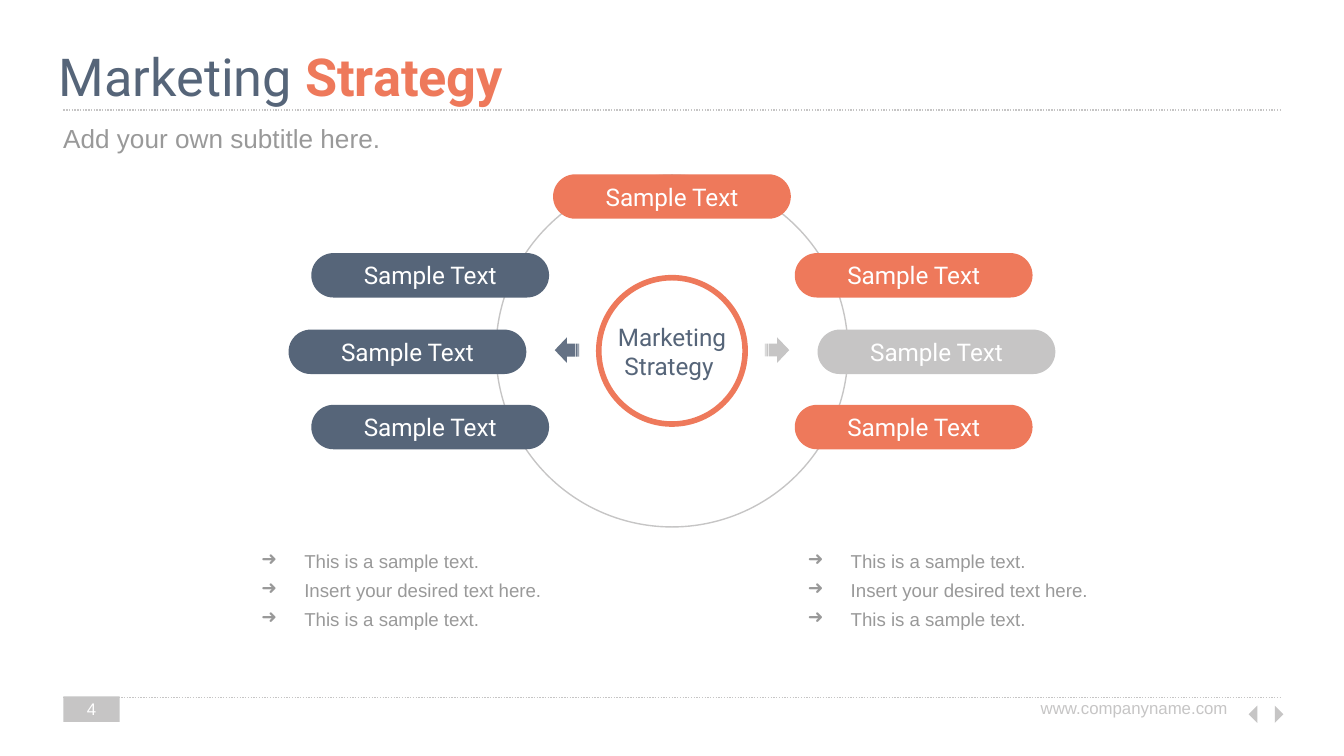
from pptx import Presentation
from pptx.dml.color import RGBColor
from pptx.enum.dml import MSO_LINE
from pptx.enum.shapes import MSO_CONNECTOR, MSO_SHAPE
from pptx.enum.text import MSO_ANCHOR, PP_ALIGN
from pptx.oxml.ns import qn
from pptx.util import Pt
from lxml.etree import SubElement

NAVY, CORAL, SILVER, GREY, WHITE = "566579", "EE795B", "C6C5C5", "999999", "FFFFFF"
SLIDE_W, SLIDE_H = 720, 405
CENTER_X, CENTER_Y = SLIDE_W / 2, 188
MARGIN = 34
PILL_W, PILL_H = 127.4, 23.8
ARROW_W, ARROW_H = 13, 13.7
POINTS = ["This is a sample text.", "Insert your desired text here.", "This is a sample text."]


def color(hex_code):
    return RGBColor.from_string(hex_code)


def mirrored(left, width):
    return SLIDE_W - left - width


def write(holder, paragraphs, size=13, font="Roboto", align=PP_ALIGN.LEFT,
          anchor=MSO_ANCHOR.TOP, bullet=None, spacing=None):
    """Each paragraph is a list of (text, colour, bold) runs."""
    frame = holder.text_frame
    frame.word_wrap = True
    frame.vertical_anchor = anchor
    frame.margin_left = frame.margin_right = Pt(7.2)
    frame.margin_top = frame.margin_bottom = Pt(7.2)
    for index, runs in enumerate(paragraphs):
        paragraph = frame.paragraphs[0] if index == 0 else frame.add_paragraph()
        paragraph.alignment = align
        if spacing:
            paragraph.line_spacing = spacing
        if bullet:
            add_bullet(paragraph, bullet, runs[0][1])
        for text, hex_code, bold in runs:
            run = paragraph.add_run()
            run.text = text
            run.font.name = font
            run.font.size = Pt(size)
            run.font.bold = bold
            run.font.color.rgb = color(hex_code)


def add_bullet(paragraph, symbol, hex_code):
    properties = paragraph._p.get_or_add_pPr()
    properties.set("marL", str(Pt(36)))
    properties.set("indent", str(Pt(-23)))
    bullet_color = SubElement(properties, qn("a:buClr"))
    SubElement(bullet_color, qn("a:srgbClr"), val=hex_code)
    SubElement(properties, qn("a:buChar"), char=symbol)


def add_text(slide, left, top, width, height, paragraphs, **text_format):
    box = slide.shapes.add_textbox(Pt(left), Pt(top), Pt(width), Pt(height))
    write(box, paragraphs, **text_format)


def add_figure(slide, preset, left, top, width, height, fill=None, outline=None,
               weight=0.75, rotation=0):
    figure = slide.shapes.add_shape(preset, Pt(left), Pt(top), Pt(width), Pt(height))
    figure.shadow.inherit = False
    figure.rotation = rotation
    if fill:
        figure.fill.solid()
        figure.fill.fore_color.rgb = color(fill)
    else:
        figure.fill.background()
    if outline:
        figure.line.color.rgb = color(outline)
        figure.line.width = Pt(weight)
    else:
        figure.line.fill.background()
    return figure


def add_rule(slide, y):
    rule = slide.shapes.add_connector(
        MSO_CONNECTOR.STRAIGHT, Pt(MARGIN), Pt(y), Pt(SLIDE_W - MARGIN), Pt(y))
    rule.line.color.rgb = color(SILVER)
    rule.line.width = Pt(0.75)
    rule.line.dash_style = MSO_LINE.ROUND_DOT
    SubElement(rule._element.spPr, qn("a:effectLst"))


def add_ring(slide, radius, outline, weight):
    add_figure(slide, MSO_SHAPE.OVAL, CENTER_X - radius, CENTER_Y - radius,
               2 * radius, 2 * radius, outline=outline, weight=weight)


def add_pill(slide, left, top, fill):
    pill = add_figure(slide, MSO_SHAPE.ROUNDED_RECTANGLE, left, top, PILL_W, PILL_H, fill)
    pill.adjustments[0] = 0.5
    write(pill, [[("Sample Text", WHITE, False)]],
          align=PP_ALIGN.CENTER, anchor=MSO_ANCHOR.MIDDLE)


def add_arrow(slide, left, fill, rotation=0):
    return add_figure(slide, MSO_SHAPE.STRIPED_RIGHT_ARROW, left, 180.7,
                      ARROW_W, ARROW_H, fill, rotation=rotation)


def set_opacity(figure, percent):
    fill_color = figure.fill._xPr.find(qn("a:solidFill"))[0]
    SubElement(fill_color, qn("a:alpha"), val=str(percent * 1000))


def add_footer(slide):
    add_rule(slide, 373.6)
    page = add_figure(slide, MSO_SHAPE.RECTANGLE, MARGIN, 373, 30.2, 13.7, SILVER)
    write(page, [[("4", WHITE, False)]], size=9, font="Arial",
          align=PP_ALIGN.CENTER, anchor=MSO_ANCHOR.MIDDLE)
    add_text(slide, 543.6, 368.6, 121, 13.7, [[("www.companyname.com", SILVER, False)]],
             size=9, font="Arial", align=PP_ALIGN.RIGHT)
    for left, rotation in ((670.3, 45), (679.7, 225)):
        add_figure(slide, MSO_SHAPE.RIGHT_TRIANGLE, left, 379.4, 6.5, 6.5,
                   SILVER, rotation=rotation)


def main():
    deck = Presentation()
    deck.slide_width, deck.slide_height = Pt(SLIDE_W), Pt(SLIDE_H)
    slide = deck.slides.add_slide(deck.slide_layouts[6])

    # Heading
    add_rule(slide, 59)
    add_text(slide, 24.5, 16.6, 671, 36.7,
             [[("Marketing ", NAVY, False), ("Strategy", CORAL, True)]], size=28)
    add_text(slide, 26.7, 61.4, 671, 25.2, [[("Add your own subtitle here.", GREY, False)]],
             size=14, font="Arial", anchor=MSO_ANCHOR.MIDDLE)

    # Rings and the label in the centre
    add_ring(slide, 94.3, SILVER, 0.75)
    add_ring(slide, 39.2, CORAL, 3)
    add_text(slide, CENTER_X - 39.2, 165.6, 78.4, 31.7,
             [[("Marketing Strategy ", NAVY, False)]], align=PP_ALIGN.CENTER)

    # Pills: one on top, three mirrored pairs at the sides
    add_pill(slide, CENTER_X - PILL_W / 2, 93.4, CORAL)
    for left, top, right_fill in ((166.8, 135.6, CORAL), (154.6, 176.6, SILVER),
                                  (166.8, 216.9, CORAL)):
        add_pill(slide, left, top, NAVY)
        add_pill(slide, mirrored(left, PILL_W), top, right_fill)

    # Arrows pointing outwards
    left_arrow = add_arrow(slide, 297.2, NAVY, rotation=180)
    set_opacity(left_arrow, 91)
    add_arrow(slide, mirrored(297.2, ARROW_W), SILVER)

    # Bullet lists
    for left in (120, 412.7):
        add_text(slide, left, 283.7, 188, 59.8, [[(point, GREY, False)] for point in POINTS],
                 size=10, font="Arial", bullet="➜", spacing=1.3)

    add_footer(slide)
    deck.save("out.pptx")


if __name__ == "__main__":
    main()
